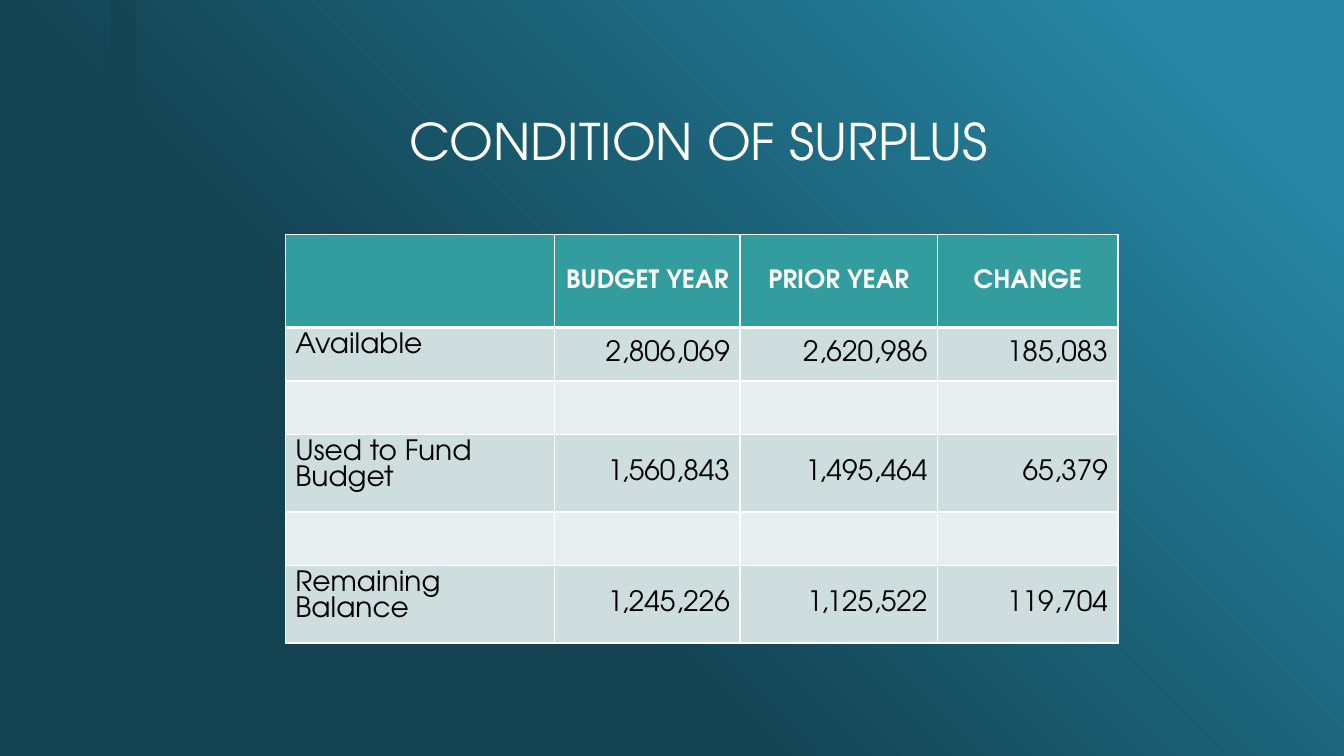
from lxml.etree import SubElement
from pptx import Presentation
from pptx.dml.color import RGBColor
from pptx.enum.shapes import MSO_SHAPE
from pptx.enum.text import MSO_ANCHOR, PP_ALIGN
from pptx.oxml.ns import qn
from pptx.util import Inches, Pt

TITLE = "CONDITION OF SURPLUS"
ROWS = [
    ("", "BUDGET YEAR", "PRIOR YEAR", "CHANGE"),
    ("Available", "2,806,069", "2,620,986", "185,083"),
    ("", "", "", ""),
    ("Used to Fund Budget", "1,560,843", "1,495,464", "65,379"),
    ("", "", "", ""),
    ("Remaining Balance", "1,245,226", "1,125,522", "119,704"),
]
COLUMN_WIDTHS = (2.67, 1.84, 1.96, 1.79)
ROW_HEIGHTS = (0.92, 0.53, 0.53, 0.77, 0.53, 0.77)
TABLE_LEFT, TABLE_TOP = 2.83, 2.33

FONT = "TeX Gyre Adventor"
WHITE, BLACK = "FFFFFF", "000000"
SKY, DEEP = "2686A4", "134251"
HEADER_FILL, BAND_FILLS = "339C9F", ("E8EFF0", "CEDEDF")


def color(value):
    return RGBColor.from_string(value)


def write(frame, text, size, ink, bold=False, align=PP_ALIGN.LEFT, spacing=None):
    para = frame.paragraphs[0]
    para.alignment = align
    para.line_spacing = spacing
    span = para.add_run()
    span.text = text
    span.font.name, span.font.size = FONT, Pt(size)
    span.font.bold, span.font.color.rgb = bold, color(ink)


def paint_background(page):
    fill = page.background.fill
    fill.gradient()
    fill.gradient_angle = 225
    for stop, position, shade in zip(fill.gradient_stops, (0.1, 0.65), (SKY, DEEP)):
        stop.position = position
        stop.color.rgb = color(shade)


def add_bar(page, height):
    bar = page.shapes.add_shape(MSO_SHAPE.RECTANGLE, Inches(1.1), 0, Inches(0.25), height)
    bar.shadow.inherit = False
    bar.fill.solid()
    bar.fill.fore_color.rgb = color(DEEP)
    bar.line.fill.background()
    shade = bar.fill._xPr.find(qn("a:solidFill"))[0]
    SubElement(shade, qn("a:alpha"), val="60000")


def add_title(page):
    box = page.shapes.add_textbox(Inches(2.83), Inches(0.5), Inches(8.2), Inches(1.25))
    box.text_frame.word_wrap = True
    box.text_frame.vertical_anchor = MSO_ANCHOR.BOTTOM
    write(box.text_frame, TITLE, 36, WHITE, align=PP_ALIGN.CENTER, spacing=0.9)


def set_borders(cell, **widths):
    """Draw white cell edges; widths are in points, keyed L, R, T, B."""
    properties = cell._tc.get_or_add_tcPr()
    for index, (side, width) in enumerate(widths.items()):
        edge = properties.makeelement(qn(f"a:ln{side}"), {"w": str(Pt(width))})
        SubElement(SubElement(edge, qn("a:solidFill")), qn("a:srgbClr"), val=WHITE)
        properties.insert(index, edge)


def add_surplus_table(page):
    table = page.shapes.add_table(
        len(ROWS), len(COLUMN_WIDTHS), Inches(TABLE_LEFT), Inches(TABLE_TOP),
        Inches(sum(COLUMN_WIDTHS)), Inches(sum(ROW_HEIGHTS))).table
    for column, width in zip(table.columns, COLUMN_WIDTHS):
        column.width = Inches(width)
    for r, (row, height) in enumerate(zip(ROWS, ROW_HEIGHTS)):
        table.rows[r].height = Inches(height)
        for c, text in enumerate(row):
            cell = table.cell(r, c)
            cell.fill.solid()
            cell.fill.fore_color.rgb = color(BAND_FILLS[r % 2] if r else HEADER_FILL)
            set_borders(cell, L=1, R=1, T=3 if r == 1 else 1, B=1 if r else 3)
            is_label = r > 0 and c == 0
            cell.vertical_anchor = MSO_ANCHOR.TOP if is_label else MSO_ANCHOR.MIDDLE
            if not text:
                continue
            if r == 0:
                write(cell.text_frame, text, 18, WHITE, bold=True, align=PP_ALIGN.CENTER)
            else:
                write(cell.text_frame, text, 20, BLACK,
                      align=PP_ALIGN.LEFT if is_label else PP_ALIGN.RIGHT)


def main():
    deck = Presentation()
    deck.slide_width, deck.slide_height = Inches(13.33), Inches(7.5)
    page = deck.slides.add_slide(deck.slide_layouts[6])
    paint_background(page)
    add_bar(page, deck.slide_height)
    add_title(page)
    add_surplus_table(page)
    deck.save("out.pptx")


if __name__ == "__main__":
    main()
